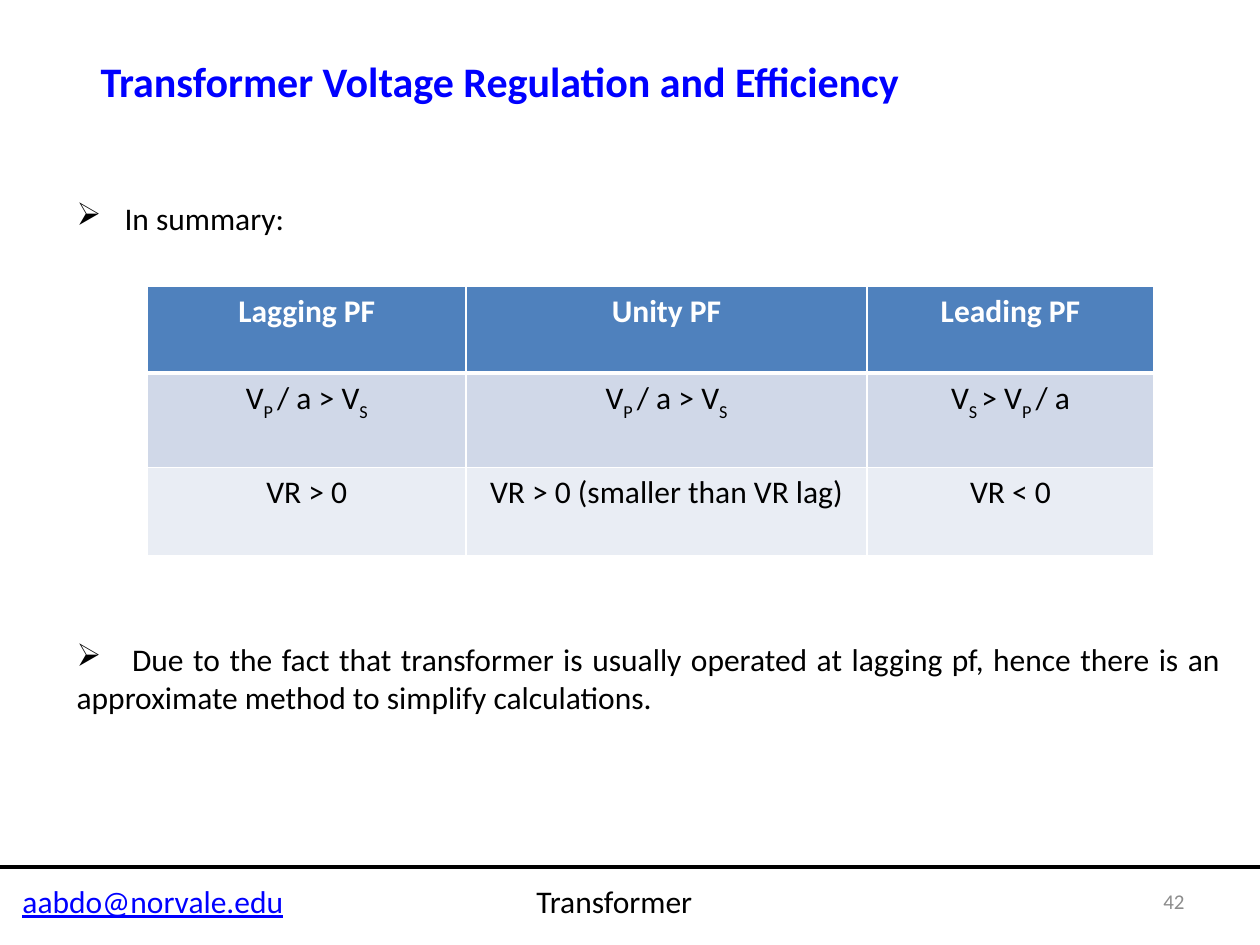
from lxml.etree import SubElement
from pptx import Presentation
from pptx.dml.color import RGBColor
from pptx.enum.shapes import MSO_CONNECTOR as Connector
from pptx.enum.text import MSO_ANCHOR as Anchor, PP_ALIGN as Align
from pptx.oxml.ns import qn
from pptx.util import Inches, Pt

WIDTH, HEIGHT = 10, 7.5
FONT = "Calibri"
COLORS = {
    "text": "000000", "accent": "0000FF", "number": "8C8C8C", "white": "FFFFFF",
    "header": "4F81BD", "band_dark": "D0D8E8", "band_light": "E9EDF4",
}
FOOTER_TOP, FOOTER_HEIGHT = 6.95, 0.4
TABLE_LEFT, TABLE_TOP = 1.17, 2.27
COLUMN_WIDTHS = [2.53, 3.18, 2.28]
ROW_HEIGHTS = [0.69, 0.75, 0.7]
ROW_FILLS = ["header", "band_dark", "band_light"]
# An underscore puts the letter after it in subscript.
TABLE_ROWS = [
    ["Lagging PF", "Unity PF", "Leading PF"],
    ["V_P / a > V_S", "V_P / a > V_S", "V_S > V_P / a"],
    ["VR > 0", "VR > 0 (smaller than VR lag)", "VR < 0"],
]


def color(name):
    return RGBColor.from_string(COLORS[name])


def write(paragraph, text, size=18, fill="text", bold=False, underline=False,
          align=Align.LEFT):
    """Fill a paragraph, setting the letter after each underscore in subscript."""
    paragraph.alignment = align
    first, *rest = text.split("_")
    pieces = [(first, False)]
    for part in rest:
        # The space after a subscript letter is subscript too.
        cut = 2 if part[1:2] == " " else 1
        pieces += [(part[:cut], True), (part[cut:], False)]
    for piece, subscript in pieces:
        if not piece:
            continue
        run = paragraph.add_run()
        run.text = piece
        font = run.font
        font.name, font.size = FONT, Pt(size)
        font.bold, font.underline = bold, underline
        font.color.rgb = color(fill)
        if subscript:
            run._r.get_or_add_rPr().set("baseline", "-30000")


def add_text(slide, text, left, top, width, height, anchor=Anchor.TOP, **style):
    box = slide.shapes.add_textbox(*map(Inches, (left, top, width, height)))
    frame = box.text_frame
    frame.word_wrap = True
    frame.vertical_anchor = anchor
    paragraph = frame.paragraphs[0]
    write(paragraph, text, **style)
    return paragraph


def add_bullet(slide, text, top, height, text_start):
    """Add an arrow bullet whose first line starts at a tab stop."""
    paragraph = add_text(slide, "\t" + text, 0.51, top, 9.28, height,
                         align=Align.JUSTIFY)
    properties = paragraph._p.get_or_add_pPr()
    properties.set("marL", "0")
    properties.set("indent", "0")
    SubElement(properties, qn("a:buChar"), char="➢")
    tabs = SubElement(properties, qn("a:tabLst"))
    SubElement(tabs, qn("a:tab"), pos=str(Inches(text_start)), algn="l")


def add_rule(slide, top):
    rule = slide.shapes.add_connector(
        Connector.STRAIGHT, 0, Inches(top), Inches(WIDTH), Inches(top))
    rule.line.color.rgb = color("text")
    rule.line.width = Pt(2.25)
    SubElement(rule._element.spPr, qn("a:effectLst"))


def set_borders(cell, **widths):
    """Draw white borders; widths maps lnL, lnR, lnT and lnB to points."""
    properties = cell._tc.get_or_add_tcPr()
    for index, (side, width) in enumerate(widths.items()):
        line = properties.makeelement(qn(f"a:{side}"), {"w": str(Pt(width))})
        solid = SubElement(line, qn("a:solidFill"))
        SubElement(solid, qn("a:srgbClr"), val=COLORS["white"])
        properties.insert(index, line)


def add_power_factor_table(slide):
    table = slide.shapes.add_table(
        len(ROW_HEIGHTS), len(COLUMN_WIDTHS), Inches(TABLE_LEFT), Inches(TABLE_TOP),
        Inches(sum(COLUMN_WIDTHS)), Inches(sum(ROW_HEIGHTS))).table
    for column, width in zip(table.columns, COLUMN_WIDTHS):
        column.width = Inches(width)
    for row_index, texts in enumerate(TABLE_ROWS):
        table.rows[row_index].height = Inches(ROW_HEIGHTS[row_index])
        is_header = row_index == 0
        for column_index, text in enumerate(texts):
            cell = table.cell(row_index, column_index)
            cell.fill.solid()
            cell.fill.fore_color.rgb = color(ROW_FILLS[row_index])
            write(cell.text_frame.paragraphs[0], text, bold=is_header,
                  fill="white" if is_header else "text", align=Align.CENTER)
            set_borders(cell, lnL=1, lnR=1, lnT=3 if row_index == 1 else 1,
                        lnB=3 if is_header else 1)


def add_footer(slide):
    add_rule(slide, 6.88)
    add_text(slide, "aabdo@norvale.edu", 0.08, FOOTER_TOP, 3, FOOTER_HEIGHT,
             fill="accent", underline=True)
    add_text(slide, "Transformer", 4.16, FOOTER_TOP, 2, FOOTER_HEIGHT)
    add_text(slide, "42", 7.17, FOOTER_TOP, 2.33, FOOTER_HEIGHT,
             anchor=Anchor.MIDDLE, size=12, fill="number", align=Align.RIGHT)


def main():
    presentation = Presentation()
    presentation.slide_width = Inches(WIDTH)
    presentation.slide_height = Inches(HEIGHT)
    slide = presentation.slides.add_slide(presentation.slide_layouts[6])
    add_footer(slide)
    add_text(slide, "Transformer Voltage Regulation and Efficiency",
             0.7, 0.39, 6.62, 0.5, size=24, fill="accent", bold=True)
    add_bullet(slide, "In summary:", 1.53, 0.4, text_start=0.38)
    add_power_factor_table(slide)
    add_bullet(slide, "Due to the fact that transformer is usually operated at "
               "lagging pf, hence there is an approximate method to simplify "
               "calculations.", 5.03, 0.7, text_start=0.44)
    presentation.save("out.pptx")


if __name__ == "__main__":
    main()
